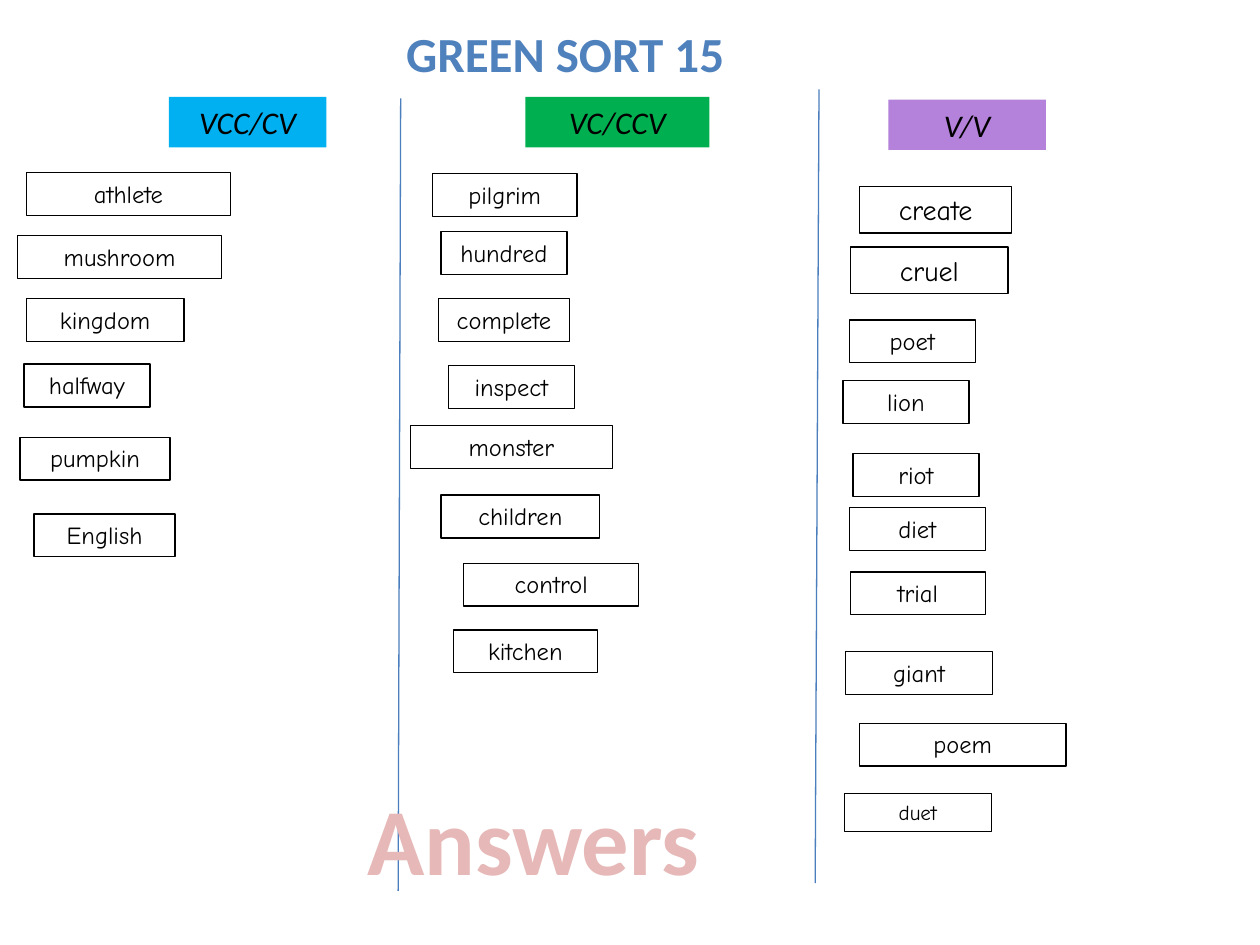
"""Build the Green Sort 15 answer slide."""
from typing import NamedTuple, Optional

from lxml.etree import SubElement
from pptx import Presentation
from pptx.dml.color import RGBColor
from pptx.enum.shapes import MSO_CONNECTOR, MSO_SHAPE
from pptx.enum.text import MSO_ANCHOR, MSO_AUTO_SIZE, PP_ALIGN
from pptx.oxml.ns import qn
from pptx.slide import Slide
from pptx.util import Inches, Pt

BLACK = RGBColor(0x00, 0x00, 0x00)
TITLE_BLUE = RGBColor(0x4F, 0x81, 0xBD)
DIVIDER_BLUE = RGBColor(0x4B, 0x7E, 0xBC)
HEADER_BLUE = RGBColor(0x00, 0xB0, 0xF0)
HEADER_GREEN = RGBColor(0x00, 0xB0, 0x50)
HEADER_PURPLE = RGBColor(0xB4, 0x82, 0xDA)
ANSWER_PINK = RGBColor(0xE6, 0xB9, 0xB8)

HEADING_FONT = "Calibri"
WORD_FONT = "Comic Neue"
WORD_HEIGHTS = {12: 0.3, 14: 0.34, 16: 0.37}


class TextStyle(NamedTuple):
    font: str
    size: int
    color: RGBColor = BLACK
    bold: bool = False
    italic: bool = False


class Header(NamedTuple):
    text: str
    left: float
    top: float
    width: float
    fill: RGBColor


class Word(NamedTuple):
    text: str
    left: float
    top: float
    width: float
    size: int = 14


class Divider(NamedTuple):
    start_x: float
    start_y: float
    end_x: float
    end_y: float


HEADER_STYLE = TextStyle(HEADING_FONT, 18, italic=True)

HEADERS = [
    Header("VCC/CV", 1.34, 0.77, 1.25, HEADER_BLUE),
    Header("VC/CCV", 4.17, 0.77, 1.46, HEADER_GREEN),
    Header("V/V", 7.05, 0.79, 1.25, HEADER_PURPLE),
]

DIVIDERS = [Divider(3.18, 0.78, 3.16, 7.07), Divider(6.5, 0.71, 6.47, 7.01)]

WORDS = [
    Word("athlete", 0.21, 1.37, 1.62),
    Word("mushroom", 0.14, 1.87, 1.62),
    Word("kingdom", 0.21, 2.37, 1.25),
    Word("halfway", 0.19, 2.89, 1),
    Word("pumpkin", 0.16, 3.47, 1.19),
    Word("English", 0.27, 4.08, 1.12),
    Word("pilgrim", 3.43, 1.38, 1.15),
    Word("hundred", 3.5, 1.84, 1),
    Word("complete", 3.48, 2.37, 1.04),
    Word("inspect", 3.56, 2.9, 1),
    Word("monster", 3.26, 3.38, 1.6),
    Word("children", 3.5, 3.93, 1.26),
    Word("control", 3.68, 4.47, 1.39),
    Word("kitchen", 3.6, 5, 1.14),
    Word("create", 6.82, 1.48, 1.21, 16),
    Word("cruel", 6.75, 1.96, 1.25, 16),
    Word("poet", 6.74, 2.54, 1),
    Word("lion", 6.69, 3.02, 1),
    Word("riot", 6.77, 3.6, 1),
    Word("diet", 6.74, 4.03, 1.08),
    Word("trial", 6.75, 4.54, 1.07),
    Word("giant", 6.71, 5.17, 1.17),
    Word("poem", 6.82, 5.74, 1.64),
    Word("duet", 6.7, 6.3, 1.17, 12),
]


def write_text(shape, text: str, style: TextStyle, wrap: bool = True) -> None:
    """Write one centred run into a shape that grows with its text."""
    frame = shape.text_frame
    frame.word_wrap = wrap
    frame.auto_size = MSO_AUTO_SIZE.SHAPE_TO_FIT_TEXT
    frame.vertical_anchor = MSO_ANCHOR.TOP
    paragraph = frame.paragraphs[0]
    paragraph.alignment = PP_ALIGN.CENTER
    run = paragraph.add_run()
    run.text = text
    run.font.name = style.font
    run.font.size = Pt(style.size)
    run.font.bold = style.bold
    run.font.italic = style.italic
    run.font.color.rgb = style.color


def add_box(slide: Slide, left: float, top: float, width: float, height: float,
            text: str, style: TextStyle, fill: Optional[RGBColor] = None) -> None:
    """Draw a filled rectangle, or an outlined one when no fill is given."""
    shape = slide.shapes.add_shape(
        MSO_SHAPE.RECTANGLE, Inches(left), Inches(top), Inches(width), Inches(height))
    shape.shadow.inherit = False
    if fill is None:
        shape.fill.background()
        shape.line.color.rgb = BLACK
        shape.line.width = Pt(0.75)
    else:
        shape.fill.solid()
        shape.fill.fore_color.rgb = fill
        shape.line.fill.background()
    write_text(shape, text, style)


def add_divider(slide: Slide, divider: Divider) -> None:
    """Draw a thin line between two columns."""
    connector = slide.shapes.add_connector(
        MSO_CONNECTOR.STRAIGHT, *(Inches(value) for value in divider))
    connector.line.color.rgb = DIVIDER_BLUE
    connector.line.width = Pt(0.75)
    SubElement(connector.element.spPr, qn("a:effectLst"))


def add_label(slide: Slide, left: float, top: float, width: float, height: float,
              text: str, style: TextStyle, wrap: bool = True) -> None:
    """Place a plain text box."""
    box = slide.shapes.add_textbox(
        Inches(left), Inches(top), Inches(width), Inches(height))
    write_text(box, text, style, wrap)


def main() -> None:
    """Assemble the slide and save it."""
    presentation = Presentation()
    presentation.slide_width = Inches(10)
    presentation.slide_height = Inches(7.5)
    slide = presentation.slides.add_slide(presentation.slide_layouts[6])
    add_label(slide, 2.18, 0.14, 4.61, 0.57, "GREEN SORT 15",
              TextStyle(HEADING_FONT, 28, TITLE_BLUE, bold=True))
    for divider in DIVIDERS:
        add_divider(slide, divider)
    for header in HEADERS:
        add_box(slide, header.left, header.top, header.width, 0.4,
                header.text, HEADER_STYLE, header.fill)
    for word in WORDS:
        add_box(slide, word.left, word.top, word.width, WORD_HEIGHTS[word.size],
                word.text, TextStyle(WORD_FONT, word.size))
    add_label(slide, 2.8, 6.15, 2.87, 1.01, "Answers",
              TextStyle(HEADING_FONT, 54, ANSWER_PINK, bold=True), wrap=False)
    presentation.save("out.pptx")


if __name__ == "__main__":
    main()
